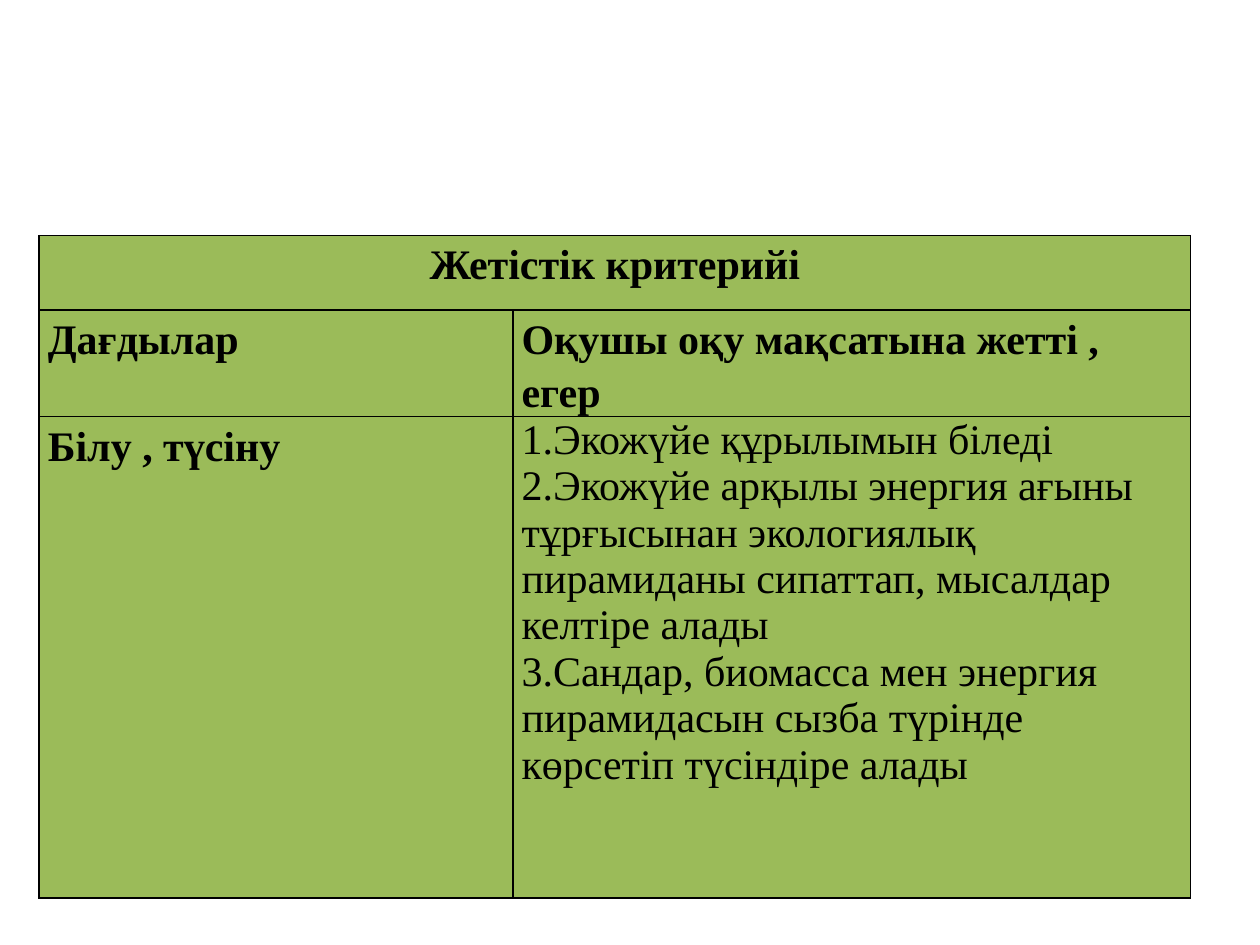
"""Build a slide with a table of achievement criteria."""
from lxml.etree import SubElement
from pptx import Presentation
from pptx.dml.color import RGBColor
from pptx.enum.text import PP_ALIGN as Align
from pptx.oxml.ns import qn
from pptx.util import Inches, Pt

GREEN = RGBColor(0x9B, 0xBB, 0x59)
BLACK = RGBColor(0, 0, 0)

HEADING = "Жетістік критерийі"
CRITERIA = [
    "1.Экожүйе құрылымын біледі",
    "2.Экожүйе арқылы энергия ағыны тұрғысынан экологиялық пирамиданы "
    "сипаттап, мысалдар келтіре алады",
    "3.Сандар, биомасса мен энергия пирамидасын сызба түрінде көрсетіп "
    "түсіндіре алады",
]
ROWS = [
    [[HEADING], []],
    [["Дағдылар"], ["Оқушы оқу мақсатына жетті , егер"]],
    [["Білу , түсіну"], CRITERIA],
]
COLUMN_WIDTHS = [3.76, 5.38]
ROW_HEIGHTS = [0.59, 0.8, 3.82]
MARGINS = {
    "margin_left": Inches(0.07),
    "margin_right": Inches(0.07),
    "margin_top": 0,
    "margin_bottom": 0,
}
FONT = {"name": "Times New Roman", "size": Pt(24)}


def add_borders(cell):
    """Draw a thin black line on all four sides of a cell."""
    properties = cell._tc.get_or_add_tcPr()
    for position, side in enumerate(("a:lnL", "a:lnR", "a:lnT", "a:lnB")):
        line = SubElement(properties, qn(side), w=str(Pt(1)))
        fill = SubElement(line, qn("a:solidFill"))
        SubElement(fill, qn("a:srgbClr"), val=str(BLACK))
        properties.insert(position, line)


def fill_cell(cell, lines):
    """Write the lines into a cell and format it."""
    cell.fill.solid()
    cell.fill.fore_color.rgb = GREEN
    for name, value in MARGINS.items():
        setattr(cell, name, value)
    add_borders(cell)
    cell.text = "\n".join(lines)
    is_label = lines is not CRITERIA
    for paragraph in cell.text_frame.paragraphs:
        paragraph.line_spacing = 1.15 if is_label else 1.0
        paragraph.alignment = Align.CENTER if lines == [HEADING] else Align.LEFT
        for run in paragraph.runs:
            for name, value in {**FONT, "bold": is_label}.items():
                setattr(run.font, name, value)
            run.font.color.rgb = BLACK


def main():
    """Lay out the table and save the slide."""
    deck = Presentation()
    deck.slide_width, deck.slide_height = Inches(10), Inches(7.5)
    slide = deck.slides.add_slide(deck.slide_layouts[6])
    table = slide.shapes.add_table(
        len(ROWS), len(COLUMN_WIDTHS), Inches(0.31), Inches(1.87),
        Inches(sum(COLUMN_WIDTHS)), Inches(sum(ROW_HEIGHTS)),
    ).table
    for column, width in zip(table.columns, COLUMN_WIDTHS):
        column.width = Inches(width)
    for row, height, contents in zip(table.rows, ROW_HEIGHTS, ROWS):
        row.height = Inches(height)
        for cell, lines in zip(row.cells, contents):
            fill_cell(cell, lines)
    table.cell(0, 0).merge(table.cell(0, 1))
    deck.save("out.pptx")


if __name__ == "__main__":
    main()
